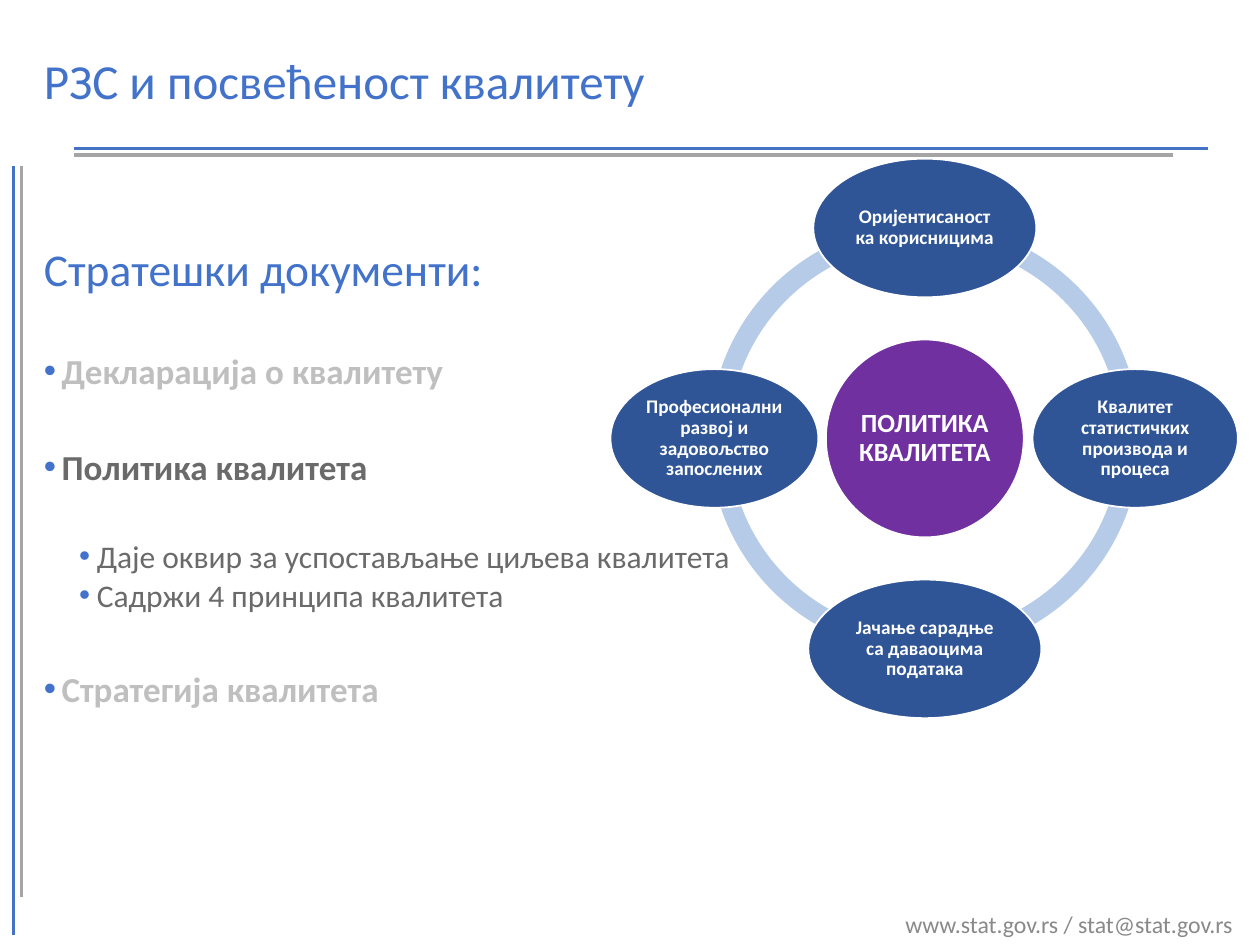
from dataclasses import dataclass
from math import cos, radians, sin

from lxml.etree import SubElement
from pptx import Presentation
from pptx.dml.color import RGBColor as Color
from pptx.enum.shapes import MSO_CONNECTOR as Connector, MSO_SHAPE as Shape
from pptx.enum.text import MSO_ANCHOR as Anchor, PP_ALIGN as Align
from pptx.oxml.ns import qn
from pptx.util import Inches, Pt


@dataclass(frozen=True)
class Theme:
    """Colours, font and type sizes of the slide."""
    font: str = "Calibri"
    heading: str = "4272CA"
    rule: str = "4472C4"
    rule_shade: str = "A5A5A5"
    body: str = "6A6A6A"
    muted: str = "BFBFBF"
    footer: str = "898989"
    ring: str = "B5CBE7"
    hub: str = "7030A0"
    node: str = "2F5597"
    white: str = "FFFFFF"
    title_size: float = 28
    heading_size: float = 26
    item_size: float = 20
    detail_size: float = 18
    footer_size: float = 13.6
    hub_size: float = 15
    node_size: float = 11


THEME = Theme()
CENTER = (7.34, 3.48)
ORBIT = 1.67
RING_SIZE = 3.42
HUB_SIZE = 1.57
NODE_HEIGHT = 1.1
QUARTER_TURN = 54

RULES = [
    ((0.11, 1.32), (0.11, 7.42), THEME.rule),
    ((0.17, 1.32), (0.17, 7.12), THEME.rule_shade),
    ((0.59, 1.18), (9.59, 1.18), THEME.rule),
    ((0.59, 1.23), (9.31, 1.23), THEME.rule_shade),
]
NODES = [
    (270, 1.77, "Оријентисаност ка корисницима"),
    (0, 1.63, "Квалитет статистичких производа и процеса"),
    (90, 1.85, "Јачање сарадње са даваоцима података"),
    (180, 1.65, "Професионални развој и задовољство запослених"),
]
HEADING = {"size": THEME.heading_size, "color": THEME.heading}
MUTED = {"size": THEME.item_size, "color": THEME.muted, "bold": True, "indent": 0.14, "before": 33.2}
CURRENT = MUTED | {"color": THEME.body}
DETAIL = {"size": THEME.detail_size, "color": THEME.body, "indent": 0.42, "before": 2.8}
DOCUMENTS = [
    ("Стратешки документи:", HEADING),
    ("Декларација о квалитету", MUTED),
    ("Политика квалитета", CURRENT),
    ("Даје оквир за успостављање циљева квалитета", DETAIL | {"before": 30.4}),
    ("Садржи 4 принципа квалитета", DETAIL),
    ("Стратегија квалитета", MUTED),
]


def apply(target, values):
    """Set every attribute named in values on target."""
    for name, value in values.items():
        setattr(target, name, value)


def add_bullet(paragraph, indent):
    """Give the paragraph a coloured bullet with a hanging indent."""
    properties = paragraph._p.get_or_add_pPr()
    properties.set("marL", str(Inches(indent)))
    properties.set("indent", str(Inches(-0.14)))
    color = SubElement(properties, qn("a:buClr"))
    SubElement(color, qn("a:srgbClr"), val=THEME.heading)
    SubElement(properties, qn("a:buFont"), typeface="Arial")
    SubElement(properties, qn("a:buChar"), char="•")


def write_paragraph(paragraph, text, size, color, bold=False, indent=None, before=0, align=Align.LEFT):
    """Write one formatted run into the paragraph."""
    if indent is not None:
        add_bullet(paragraph, indent)
    apply(paragraph, {"alignment": align, "line_spacing": 0.9, "space_before": Pt(before)})
    run = paragraph.add_run()
    run.text = text
    apply(run.font, {"name": THEME.font, "size": Pt(size), "bold": bold})
    run.font.color.rgb = Color.from_string(color)


def add_text(slide, box, items, anchor=Anchor.TOP):
    """Add a wrapping text box with one paragraph per item."""
    frame = slide.shapes.add_textbox(*map(Inches, box)).text_frame
    apply(frame, {"word_wrap": True, "vertical_anchor": anchor})
    for index, (text, style) in enumerate(items):
        paragraph = frame.add_paragraph() if index else frame.paragraphs[0]
        write_paragraph(paragraph, text, **style)


def add_rule(slide, start, end, color):
    """Add a straight rule without shadow."""
    rule = slide.shapes.add_connector(Connector.STRAIGHT, *map(Inches, start + end))
    rule.line.width = Pt(1.75)
    rule.line.color.rgb = Color.from_string(color)
    SubElement(rule._element.spPr, qn("a:effectLst"))


def add_centered_shape(slide, kind, center, width, height, fill):
    """Add a flat filled shape around a centre point."""
    box = (center[0] - width / 2, center[1] - height / 2, width, height)
    shape = slide.shapes.add_shape(kind, *map(Inches, box))
    shape.shadow.inherit = False
    shape.fill.solid()
    shape.fill.fore_color.rgb = Color.from_string(fill)
    shape.line.fill.background()
    return shape


def add_ring(slide):
    """Add the ring as four quarter arcs."""
    for quarter in range(4):
        arc = add_centered_shape(slide, Shape.BLOCK_ARC, CENTER, RING_SIZE, RING_SIZE, THEME.ring)
        arc.adjustments[0] = quarter * QUARTER_TURN
        arc.adjustments[1] = (quarter + 1) % 4 * QUARTER_TURN
        arc.adjustments[2] = 0.046


def add_ellipse(slide, center, width, height, fill, text, size):
    """Add a white-edged ellipse with a centred bold label."""
    ellipse = add_centered_shape(slide, Shape.OVAL, center, width, height, fill)
    ellipse.line.width = Pt(1)
    ellipse.line.color.rgb = Color.from_string(THEME.white)
    frame = ellipse.text_frame
    margins = {f"margin_{side}": Inches(0.02) for side in ("left", "top", "right", "bottom")}
    apply(frame, margins | {"word_wrap": True, "vertical_anchor": Anchor.MIDDLE})
    write_paragraph(frame.paragraphs[0], text, size, THEME.white, bold=True, align=Align.CENTER)


def add_policy_diagram(slide):
    """Add the ring, the policy hub and its four principles."""
    add_ring(slide)
    add_ellipse(slide, CENTER, HUB_SIZE, HUB_SIZE, THEME.hub, "ПОЛИТИКА КВАЛИТЕТА", THEME.hub_size)
    for angle, width, text in NODES:
        turn = radians(angle)
        center = (CENTER[0] + ORBIT * cos(turn), CENTER[1] + ORBIT * sin(turn))
        add_ellipse(slide, center, width, NODE_HEIGHT, THEME.node, text, THEME.node_size)


def main():
    """Build the slide and save it."""
    presentation = Presentation()
    apply(presentation, {"slide_width": Inches(10), "slide_height": Inches(7.5)})
    slide = presentation.slides.add_slide(presentation.slide_layouts[6])
    footer = {"size": THEME.footer_size, "color": THEME.footer, "align": Align.RIGHT}
    add_text(slide, (6.5, 7.2, 3.38, 0.3), [("www.stat.gov.rs / stat@stat.gov.rs", footer)])
    for start, end, color in RULES:
        add_rule(slide, start, end, color)
    title = HEADING | {"size": THEME.title_size}
    add_text(slide, (0.25, 0.16, 9.5, 1), [("РЗС и посвећеност квалитету", title)], Anchor.MIDDLE)
    add_text(slide, (0.25, 1.91, 9.5, 5.14), DOCUMENTS)
    add_policy_diagram(slide)
    presentation.save("out.pptx")


if __name__ == "__main__":
    main()
